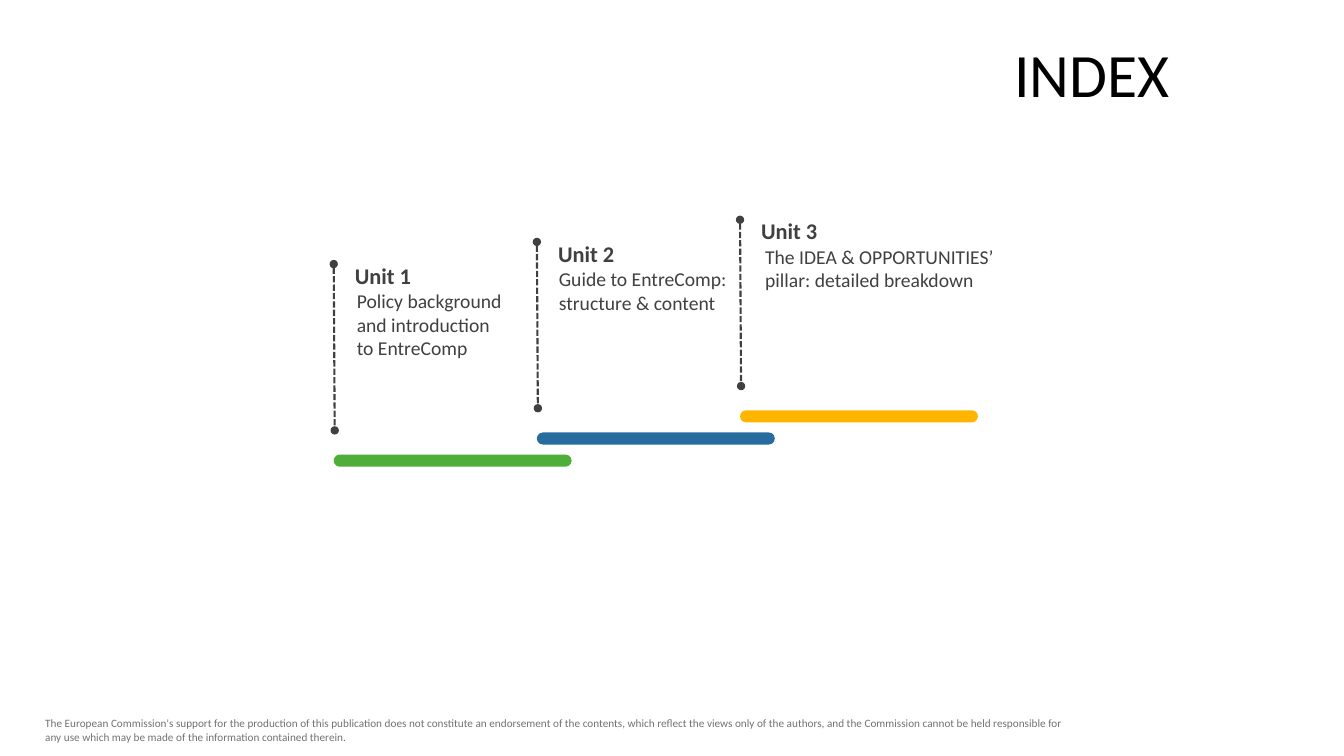
from dataclasses import dataclass

from lxml import etree
from pptx import Presentation
from pptx import util as u
from pptx.dml import color
from pptx.enum import dml, shapes, text
from pptx.oxml import ns


@dataclass(frozen=True)
class Theme:
    font: str = "Calibri"
    black: str = "000000"
    dark: str = "404040"
    muted: str = "767171"
    green: str = "4EAE3A"
    blue: str = "266C9F"
    amber: str = "FFB500"
    title: int = 44
    heading: int = 16
    body: int = 14
    footer: int = 8


THEME = Theme()
COLUMN_STEP = 2.015
ROW_STEP = -0.22
UNITS = [
    ("Unit 1", "Policy background and introduction to EntreComp",
     THEME.green, 1.73, 1.72, 0.13),
    ("Unit 2", "Guide to EntreComp: structure & content",
     THEME.blue, 1.73, 1.9, 0.12),
    ("Unit 3", "The IDEA & OPPORTUNITIES’ pillar: detailed breakdown",
     THEME.amber, 2.64, 2.63, 0.15),
]
DISCLAIMER = (
    "The European Commission's support for the production of this publication "
    "does not constitute an endorsement of the contents, which reflect the views "
    "only of the authors, and the Commission cannot be held responsible for any "
    "use which may be made of the information contained therein."
)


def rgb(value):
    return color.RGBColor.from_string(value)


def add_span(para, words, size, ink, bold=False):
    span = para.add_run()
    span.text = words
    span.font.name = THEME.font
    span.font.size = u.Pt(size)
    span.font.bold = bold
    span.font.color.rgb = rgb(ink)


def add_text(page, box, words, size, ink, bold=False, side_inset=0.1):
    frame = page.shapes.add_textbox(*map(u.Inches, box)).text_frame
    frame.word_wrap = True
    frame.margin_left = frame.margin_right = u.Inches(side_inset)
    add_span(frame.paragraphs[0], words, size, ink, bold)


def add_title(page, box):
    title = page.shapes.title
    title.left, title.top, title.width, title.height = map(u.Inches, box)
    frame = title.text_frame
    frame.word_wrap = True
    frame.auto_size = text.MSO_AUTO_SIZE.NONE
    frame.vertical_anchor = text.MSO_ANCHOR.MIDDLE
    para = frame.paragraphs[0]
    para.alignment = text.PP_ALIGN.RIGHT
    para.line_spacing = 0.9
    add_span(para, "INDEX", THEME.title, THEME.black)


def add_bar(page, box, fill):
    bar = page.shapes.add_shape(
        shapes.MSO_SHAPE.ROUNDED_RECTANGLE, *map(u.Inches, box))
    bar.adjustments[0] = 0.5
    bar.shadow.inherit = False
    bar.fill.solid()
    bar.fill.fore_color.rgb = rgb(fill)
    bar.line.fill.background()


def add_stem(page, left, top, height):
    stem = page.shapes.add_connector(
        shapes.MSO_CONNECTOR.STRAIGHT,
        *map(u.Inches, (left, top, left + 0.01, top + height)))
    stem.line.color.rgb = rgb(THEME.dark)
    stem.line.width = u.Pt(1.5)
    stem.line.dash_style = dml.MSO_LINE.SQUARE_DOT
    outline = stem._element.spPr.find(ns.qn("a:ln"))
    outline.find(ns.qn("a:prstDash")).set("val", "sysDash")
    for end in ("a:headEnd", "a:tailEnd"):
        etree.SubElement(outline, ns.qn(end), type="oval")
    etree.SubElement(stem._element.spPr, ns.qn("a:effectLst"))


def add_unit(page, left, top, unit):
    heading, body, fill, heading_width, body_width, body_indent = unit
    add_bar(page, (left, top + 1.89, 2.36, 0.12), fill)
    add_text(page, (left + body_indent, top + 0.2, body_width, 0.81),
             body, THEME.body, THEME.dark)
    add_text(page, (left + 0.09, top - 0.07, heading_width, 0.37),
             heading, THEME.heading, THEME.dark, True, 0.12)
    add_stem(page, left, top, 1.65)


def add_index(page, left, top):
    for step, unit in enumerate(UNITS):
        add_unit(page, left + step * COLUMN_STEP, top + step * ROW_STEP, unit)


def add_footer(page, box):
    add_text(page, box, DISCLAIMER, THEME.footer, THEME.muted)


def main():
    deck = Presentation()
    deck.slide_width = u.Inches(13.33)
    deck.slide_height = u.Inches(7.5)
    page = deck.slides.add_slide(deck.slide_layouts.get_by_name("Title Only"))
    add_footer(page, (0.35, 7.06, 10.46, 0.37))
    add_title(page, (3.09, 0.37, 8.61, 0.79))
    add_index(page, 3.31, 2.62)
    deck.save("out.pptx")


if __name__ == "__main__":
    main()
